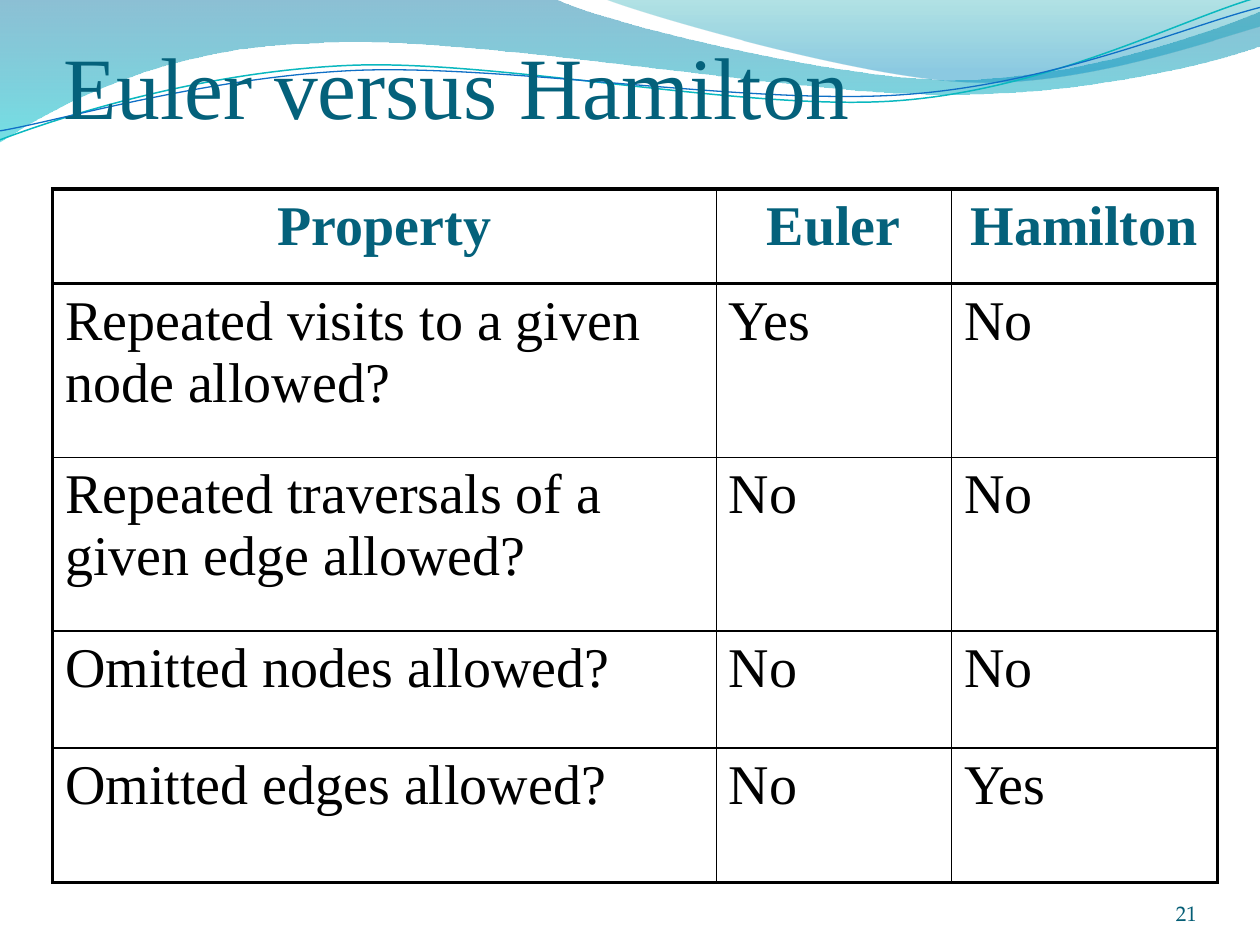
from dataclasses import dataclass
from math import cos, radians, sin

from lxml import etree
from pptx import Presentation
from pptx.dml.color import RGBColor
from pptx.enum import text as t
from pptx.oxml import ns
from pptx.util import Cm, Pt


@dataclass(frozen=True)
class Theme:
    """Colours, fonts and type sizes of the slide."""
    ink: str = "000000"
    head: str = "04617B"
    note: str = "045D75"
    teal: str = "0AB8BF"
    blue: str = "0F6FC6"
    serif: str = "Times New Roman"
    small: str = "TeX Gyre Pagella"
    title: int = 50
    cell: int = 32
    page: int = 12
    thick: float = 2.25
    thin: float = 1


THEME = Theme()
TILT = -2.7

BANDS = [
    ((-0.03, -0.03, 25.46, 2.9),
     [(0, 0), (11.18, -0.03),
      (12.09, 0.43, 16.87, 1.6, 19.25, 1.6), (21.67, 1.6, 24.33, 0.66, 25.4, 0.23),
      (25.43, 0.91),
      (24.97, 1.12, 22.1, 1.93, 18.95, 1.9), (15.8, 1.9, 9.7, 0.71, 6.53, 0.86),
      (3.28, 0.91, 1.17, 2.11, -0.03, 2.87), (0, 0)],
     [(0, "0074A1", 45), (1, "00C6CF", 55)]),
    ((12.17, -0.03, 13.23, 1.78),
     [(12.17, -0.03),
      (12.93, 0.28, 17.32, 1.57, 19.53, 1.65), (21.74, 1.75, 24.41, 0.81, 25.4, 0.53),
      (25.4, 0), (12.17, -0.03)],
     [(0, "00A1A9", 30), (0.8, "008BBF", 45)]),
]
LINES = [
    ((-0.05, 0.56, 25.45, 1.8),
     [(0, 2.82), (1.22, 2.36, 4.01, 1.45, 7.04, 1.32),
      (10.03, 1.19, 15.06, 2.26, 18.11, 2.03), (21.16, 1.8, 23.83, 0.38, 25.35, -0.05)],
     THEME.teal, 0.85),
    ((-0.05, 0.76, 25.48, 1.47),
     [(0, 2.64), (1.19, 2.44, 4.17, 1.55, 7.19, 1.42),
      (10.24, 1.3, 15.16, 2.13, 18.21, 1.91), (21.23, 1.7, 23.9, 0.53, 25.4, 0.15)],
     THEME.blue, 0.75),
]
ROWS = [
    ("Property", "Euler", "Hamilton"),
    ("Repeated visits to a given node allowed?", "Yes", "No"),
    ("Repeated traversals of a given edge allowed?", "No", "No"),
    ("Omitted nodes allowed?", "No", "No"),
    ("Omitted edges allowed?", "No", "Yes"),
]
WIDTHS = (13.38, 4.74, 5.36)
HEIGHTS = (1.91, 3.5, 3.5, 2.36, 2.71)


def style(para, face, size, color, align, bold=False):
    """Format one paragraph."""
    font = para.font
    font.name, font.size, font.bold = face, Pt(size), bold
    font.color.rgb = RGBColor.from_string(color)
    para.alignment = align


def frame(shape, box, top=0):
    """Place a text shape in its box, with bottom-anchored text."""
    shape.left, shape.top, shape.width, shape.height = map(Cm, box)
    body = shape.text_frame
    body.margin_left = body.margin_right = body.margin_bottom = 0
    body.margin_top = Cm(top)
    body.word_wrap = True
    body.auto_size = t.MSO_AUTO_SIZE.NONE
    body.vertical_anchor = t.MSO_ANCHOR.BOTTOM
    return body


def local(x, y, box, turn):
    """Map a point on the slide into a box that is turned about its centre."""
    left, top, wide, high = box
    dx, dy = x - left - wide / 2, y - top - high / 2
    a = radians(-turn)
    return (Cm(dx * cos(a) - dy * sin(a) + wide / 2),
            Cm(dx * sin(a) + dy * cos(a) + high / 2))


def outline(shapes, box, path, turn=0, close=False):
    """Draw one freeform of straight and curved parts."""
    left, top, wide, high = map(Cm, box)
    pen = shapes.build_freeform(left, top)
    pen.add_line_segments([(left + wide, top + high)], close=close)
    shape = pen.convert_to_shape()
    shape.shadow.inherit = False
    shape.rotation = turn
    track = next(shape._element.iter(ns.qn("a:path")))
    for old in list(track):
        track.remove(old)
    for i, part in enumerate(path):
        kind = "moveTo" if i == 0 else "lnTo" if len(part) == 2 else "cubicBezTo"
        step = etree.SubElement(track, ns.qn(f"a:{kind}"))
        for x, y in zip(part[::2], part[1::2]):
            px, py = local(x, y, box, turn)
            etree.SubElement(step, ns.qn("a:pt"), x=str(px), y=str(py))
    if close:
        etree.SubElement(track, ns.qn("a:close"))
    return shape


def waves(slide):
    """Draw the bands and lines across the top."""
    for box, path, stops in BANDS:
        shape = outline(slide.shapes, box, path[:-1], close=True)
        shape.line.fill.background()
        shape.fill.gradient()
        shape.fill.gradient_angle = 270
        for stop, (place, color, _) in zip(shape.fill.gradient_stops, stops):
            stop.position = place
            stop.color.rgb = RGBColor.from_string(color)
        tints = shape._element.spPr.iter(ns.qn("a:srgbClr"))
        for tint, (_, _, alpha) in zip(list(tints), stops):
            etree.SubElement(tint, ns.qn("a:alpha"), val=str(alpha * 1000))
    group = slide.shapes.add_group_shape()
    for box, path, color, width in LINES:
        shape = outline(group.shapes, box, path, TILT)
        shape.fill.background()
        shape.line.color.rgb = RGBColor.from_string(color)
        shape.line.width = Pt(width)


def heading(slide, box):
    """Fill the title placeholder and bring it above the waves."""
    title = slide.shapes.title
    body = frame(title, box, 0.13)
    body.text = "Euler versus Hamilton"
    style(body.paragraphs[0], THEME.serif, THEME.title, THEME.head, t.PP_ALIGN.LEFT)
    slide.shapes._spTree.append(title._element)


def border(cell, sides):
    """Rule the sides of a cell, given as a map of side to width."""
    props = cell._tc.get_or_add_tcPr()
    for side, width in sides.items():
        line = etree.SubElement(props, ns.qn(f"a:ln{side}"), w=str(Pt(width)))
        fill = etree.SubElement(line, ns.qn("a:solidFill"))
        etree.SubElement(fill, ns.qn("a:srgbClr"), val=THEME.ink)


def grid(slide, box):
    """Build the comparison table."""
    table = slide.shapes.add_table(len(ROWS), len(WIDTHS), *map(Cm, box)).table
    table.first_row = table.horz_banding = False
    for col, width in zip(table.columns, WIDTHS):
        col.width = Cm(width)
    for row, height in zip(table.rows, HEIGHTS):
        row.height = Cm(height)
    end, edge = len(ROWS) - 1, len(WIDTHS) - 1
    for r, words in enumerate(ROWS):
        for c, word in enumerate(words):
            cell = table.cell(r, c)
            cell.text = word
            top = r == 0
            style(cell.text_frame.paragraphs[0], THEME.serif, THEME.cell,
                  THEME.head if top else THEME.ink,
                  t.PP_ALIGN.CENTER if top else t.PP_ALIGN.LEFT, top)
            heavy = {"L": c == 0, "R": c == edge, "T": r < 2, "B": r in (0, end)}
            border(cell, {s: THEME.thick if on else THEME.thin for s, on in heavy.items()})
            cell.fill.background()


def number(slide, box):
    """Write the page number."""
    body = frame(slide.shapes.add_textbox(*map(Cm, box)), box)
    body.text = "21"
    style(body.paragraphs[0], THEME.small, THEME.page, THEME.note, t.PP_ALIGN.RIGHT)


def main():
    """Build and save the slide."""
    deck = Presentation()
    deck.slide_width, deck.slide_height = Cm(25.4), Cm(19.05)
    slide = deck.slides.add_slide(deck.slide_layouts[5])
    waves(slide)
    heading(slide, (1.27, 0.42, 22.86, 2.34))
    grid(slide, (1.06, 3.81, sum(WIDTHS), sum(HEIGHTS)))
    number(slide, (22.02, 17.65, 2.11, 1.02))
    deck.save("out.pptx")


if __name__ == "__main__":
    main()
